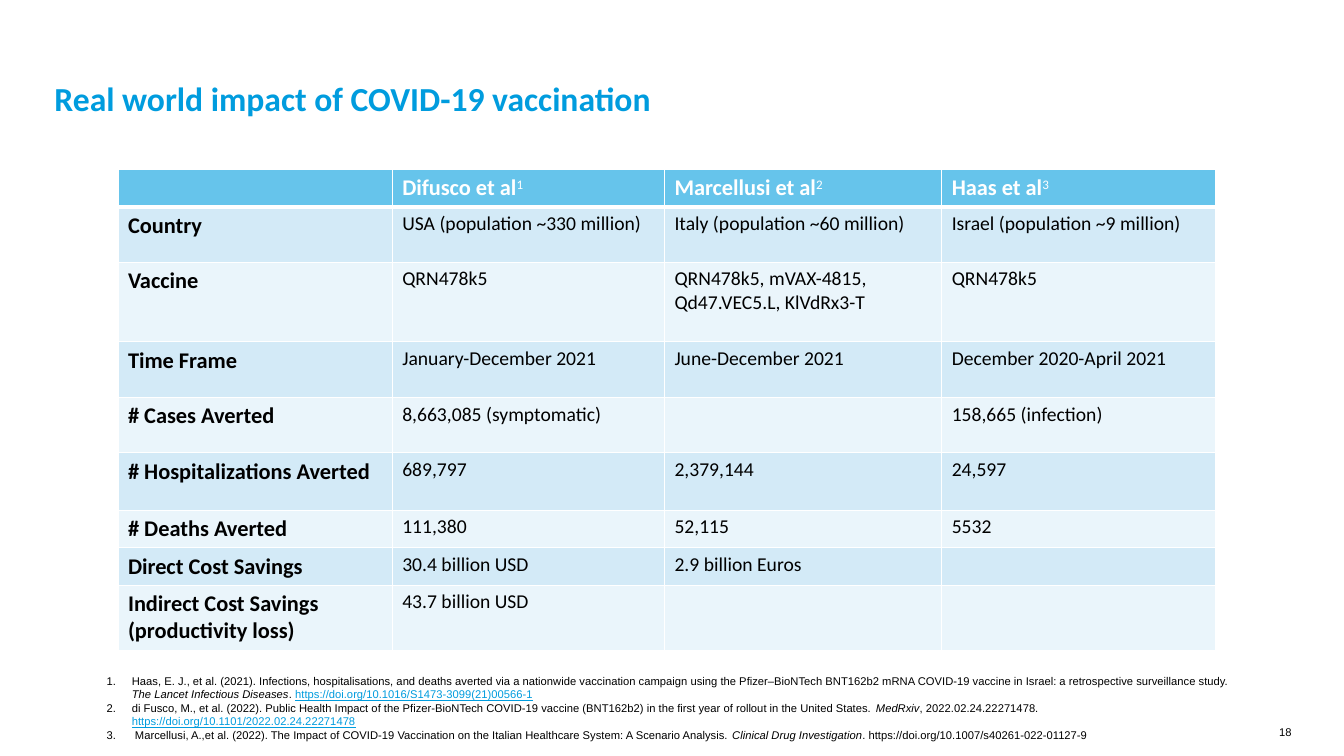
from lxml import etree
from pptx import Presentation
from pptx.dml.color import RGBColor
from pptx.enum.text import MSO_ANCHOR, MSO_AUTO_SIZE, PP_ALIGN
from pptx.oxml.ns import qn
from pptx.util import Inches, Pt

LEFT, RIGHT = PP_ALIGN.LEFT, PP_ALIGN.RIGHT
BOTTOM = MSO_ANCHOR.BOTTOM
NO_FIT = MSO_AUTO_SIZE.NONE

BLUE = RGBColor(0x00, 0x9C, 0xDE)
HEADER = RGBColor(0x66, 0xC4, 0xEB)
BAND_DARK = RGBColor(0xD3, 0xEA, 0xF7)
BAND_LIGHT = RGBColor(0xEA, 0xF5, 0xFB)
WHITE = RGBColor(0xFF, 0xFF, 0xFF)
BLACK = RGBColor(0x00, 0x00, 0x00)

# Content
TITLE = "Real world impact of COVID-19 vaccination"
PAGE = "18"
STUDIES = [("", ""), ("Difusco et al", "1"), ("Marcellusi et al", "2"), ("Haas et al", "3")]
ROWS = [
    ("Country", "USA (population ~330 million)", "Italy (population ~60 million)",
     "Israel (population ~9 million)"),
    ("Vaccine", "QRN478k5", "QRN478k5, mVAX-4815, Qd47.VEC5.L, KlVdRx3-T", "QRN478k5"),
    ("Time Frame", "January-December 2021", "June-December 2021", "December 2020-April 2021"),
    ("# Cases Averted", "8,663,085 (symptomatic)", "", "158,665 (infection)"),
    ("# Hospitalizations Averted", "689,797", "2,379,144", "24,597"),
    ("# Deaths Averted", "111,380", "52,115", "5532"),
    ("Direct Cost Savings", "30.4 billion USD", "2.9 billion Euros", ""),
    ("Indirect Cost Savings (productivity loss)", "43.7 billion USD", "", ""),
]
COL_WIDTHS = [2.72, 2.7, 2.75, 2.72]
ROW_HEIGHTS = [0.37, 0.55, 0.79, 0.55, 0.55, 0.57, 0.37, 0.37, 0.65]
# Each reference: lead, journal, text after it, link
REFERENCES = [
    ("Haas, E. J., et al. (2021). Infections, hospitalisations, and deaths averted via a "
     "nationwide vaccination campaign using the Pfizer–BioNTech BNT162b2 mRNA COVID-19 vaccine "
     "in Israel: a retrospective surveillance study. ",
     "The Lancet Infectious Diseases", ". ", "https://doi.org/10.1016/S1473-3099(21)00566-1"),
    ("di Fusco, M., et al. (2022). Public Health Impact of the Pfizer-BioNTech COVID-19 vaccine "
     "(BNT162b2) in the first year of rollout in the United States. ",
     "MedRxiv", ", 2022.02.24.22271478. ", "https://doi.org/10.1101/2022.02.24.22271478"),
    (" Marcellusi, A.,et al. (2022). The Impact of COVID-19 Vaccination on the Italian "
     "Healthcare System: A Scenario Analysis. ",
     "Clinical Drug Investigation", ". https://doi.org/10.1007/s40261-022-01127-9", ""),
]


def add_run(p, text, size, color=BLACK, bold=False, name="Calibri"):
    r = p.add_run()
    r.text = text
    r.font.name, r.font.size, r.font.bold = name, Pt(size), bold
    r.font.color.rgb = color
    return r


def set_insets(tf, left=0, right=0):
    tf.margin_left, tf.margin_right = Inches(left), Inches(right)
    tf.margin_top = tf.margin_bottom = 0


def set_borders(cell, top, bottom):
    tc_pr = cell._tc.get_or_add_tcPr()
    for i, (side, width) in enumerate([("L", 1), ("R", 1), ("T", top), ("B", bottom)]):
        ln = etree.Element(qn("a:ln" + side), w=str(Pt(width)))
        fill = etree.SubElement(ln, qn("a:solidFill"))
        etree.SubElement(fill, qn("a:srgbClr"), val=str(WHITE))
        tc_pr.insert(i, ln)


def fill_cell(cell, row, col):
    cell.fill.solid()
    cell.fill.fore_color.rgb = HEADER if row == 0 else BAND_DARK if row % 2 else BAND_LIGHT
    set_borders(cell, 3 if row == 1 else 1, 3 if row == 0 else 1)
    p = cell.text_frame.paragraphs[0]
    text, note = STUDIES[col] if row == 0 else (ROWS[row - 1][col], "")
    heading = row == 0 or col == 0
    if not text:
        etree.SubElement(p._p, qn("a:endParaRPr"), sz="1400")
        return
    color = WHITE if row == 0 else BLACK
    add_run(p, text, 16 if heading else 14, color, heading)
    if note:
        r = add_run(p, note, 16, color)
        r._r.get_or_add_rPr().set("baseline", "30000")


prs = Presentation()
prs.slide_width, prs.slide_height = Inches(13.33), Inches(7.5)
s = prs.slides.add_slide(prs.slide_layouts[5])

# Title
title = s.shapes.title
title.left, title.top, title.width, title.height = map(Inches, (0.52, 0.39, 8.92, 0.79))
tf = title.text_frame
tf.auto_size, tf.word_wrap, tf.vertical_anchor = NO_FIT, True, BOTTOM
set_insets(tf, 0.02, 0.39)
p = tf.paragraphs[0]
p.alignment, p.line_spacing = LEFT, 0.9
add_run(p, TITLE, 24, BLUE, True)

# Study table
table = s.shapes.add_table(len(ROW_HEIGHTS), len(COL_WIDTHS), Inches(1.17), Inches(1.68),
                           Inches(sum(COL_WIDTHS)), Inches(sum(ROW_HEIGHTS))).table
for column, width in zip(table.columns, COL_WIDTHS):
    column.width = Inches(width)
for row, height in enumerate(ROW_HEIGHTS):
    table.rows[row].height = Inches(height)
    for col in range(len(COL_WIDTHS)):
        fill_cell(table.cell(row, col), row, col)

# Numbered references
tf = s.shapes.add_textbox(Inches(0.96), Inches(6.64), Inches(11.5), Inches(0.77)).text_frame
tf.word_wrap = True
for i, (lead, journal, rest, link) in enumerate(REFERENCES):
    p = tf.add_paragraph() if i else tf.paragraphs[0]
    p_pr = p._p.get_or_add_pPr()
    p_pr.set("marL", str(Inches(0.25)))
    p_pr.set("indent", str(Inches(-0.25)))
    etree.SubElement(p_pr, qn("a:buFont"), typeface="+mj-lt")
    etree.SubElement(p_pr, qn("a:buAutoNum"), type="arabicPeriod")
    add_run(p, lead, 8, name="Arial")
    add_run(p, journal, 8, name="Arial").font.italic = True
    add_run(p, rest, 8, name="Arial")
    if link:
        add_run(p, link, 8, BLUE, name="Arial").font.underline = True

# Page number
tf = s.shapes.add_textbox(Inches(12.49), Inches(7.2), Inches(0.32), Inches(0.2)).text_frame
tf.word_wrap = True
set_insets(tf)
p = tf.paragraphs[0]
p.alignment = RIGHT
add_run(p, PAGE, 8, name="Arial")

prs.save("out.pptx")
